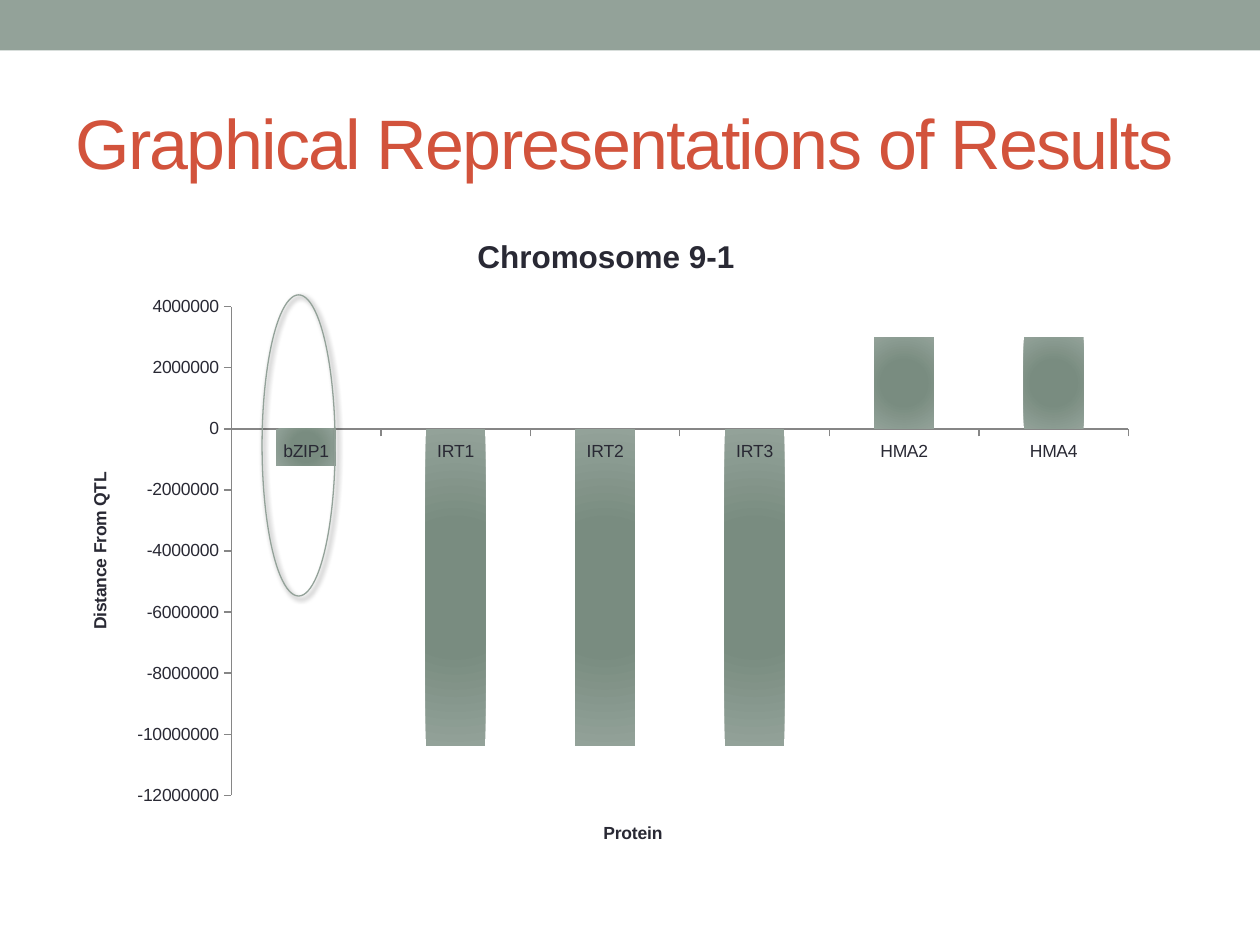
import pptx
import pptx.util
import pptx.oxml
import pptx.oxml.ns
import pptx.dml.color
import pptx.chart.data
import pptx.enum.chart
import pptx.enum.shapes
import pptx.enum.text
import lxml.etree

Inches = pptx.util.Inches
Pt = pptx.util.Pt
HUES = {"sage": "93A299", "moss": "798C80", "rust": "D2533C", "ink": "292934", "grey": "868686", "black": "000000"}
NS = pptx.oxml.ns.nsdecls("a", "c")


def hue(name):
    return pptx.dml.color.RGBColor.from_string(HUES[name])


def style(font, size, name, bold=False):
    font.name = "Arial"
    font.size = Pt(size)
    font.bold = bold
    font.color.rgb = hue(name)


deck = pptx.Presentation()
deck.slide_width, deck.slide_height = Inches(10), Inches(7.5)
slide = deck.slides.add_slide(deck.slide_layouts[5])
shapes = slide.shapes

title = shapes.title
title.left, title.top, title.width, title.height = Inches(0.5), Inches(0.58), Inches(9), Inches(1.08)
frame = title.text_frame
frame.text = "Graphical Representations of Results"
frame.word_wrap = True
frame.vertical_anchor = pptx.enum.text.MSO_ANCHOR.MIDDLE
line = frame.paragraphs[0]
line.alignment = pptx.enum.text.PP_ALIGN.LEFT
style(line.runs[0].font, 40, "rust")
line.runs[0].font._element.set("spc", "-100")

band = shapes.add_shape(pptx.enum.shapes.MSO_SHAPE.RECTANGLE, 0, 0, Inches(10), Inches(0.4))
band.shadow.inherit = False
band.fill.solid()
band.fill.fore_color.rgb = hue("sage")
band.line.fill.background()

data = pptx.chart.data.CategoryChartData()
data.categories = ["bZIP1", "IRT1", "IRT2", "IRT3", "HMA2", "HMA4"]
data.add_series("Series 1", [-1200000] + [-10400000] * 3 + [3000000] * 2)
chart = shapes.add_chart(
    pptx.enum.chart.XL_CHART_TYPE.COLUMN_CLUSTERED,
    Inches(0.5), Inches(1.67), Inches(8.62), Inches(5.24), data,
).chart
style(chart.font, 10, "ink")
chart.has_legend = False
chart.has_title = True
chart.chart_title.text_frame.text = "Chromosome 9-1"
style(chart.chart_title.text_frame.paragraphs[0].runs[0].font, 18, "ink", True)

for axis, name in ((chart.category_axis, "Protein"), (chart.value_axis, "Distance From QTL")):
    axis.has_title = True
    axis.axis_title.text_frame.text = name
    style(axis.axis_title.text_frame.paragraphs[0].runs[0].font, 10, "ink", True)
    axis.has_major_gridlines = False
    axis.major_tick_mark = pptx.enum.chart.XL_TICK_MARK.OUTSIDE
    axis.format.line.color.rgb = hue("grey")
    axis.format.line.width = Pt(0.75)

scale = chart.value_axis
scale.minimum_scale, scale.maximum_scale, scale.major_unit = -12000000, 4000000, 2000000
scale.tick_labels.number_format = "0"
scale.tick_labels.number_format_is_linked = False

plot = chart.plots[0]
plot.vary_by_categories = False
plot.gap_width = 150
bars = plot.series[0]
bars.invert_if_negative = False
bars.format.fill.solid()
bars.format.fill.fore_color.rgb = hue("sage")
solid = bars.format.fill._xPr.find(pptx.oxml.ns.qn("a:solidFill"))
blend = pptx.oxml.parse_xml(
    f'<a:gradFill {NS} rotWithShape="1"><a:gsLst>'
    f'<a:gs pos="0"><a:srgbClr val="{HUES["moss"]}"/></a:gs>'
    f'<a:gs pos="40000"><a:srgbClr val="{HUES["moss"]}"/></a:gs>'
    f'<a:gs pos="100000"><a:srgbClr val="{HUES["sage"]}"/></a:gs></a:gsLst>'
    '<a:path path="circle"><a:fillToRect l="50000" t="50000" r="50000" b="50000"/></a:path></a:gradFill>'
)
solid.getparent().replace(solid, blend)

area = chart._chartSpace.chart.plotArea
for old in area.findall(pptx.oxml.ns.qn("c:layout")):
    area.remove(old)
spots = "".join(f'<c:{key} val="{val}"/>' for key, val in (
    ("layoutTarget", "inner"), ("xMode", "edge"), ("yMode", "edge"),
    ("x", 0.155), ("y", 0.146), ("w", 0.826), ("h", 0.74)))
area.insert(0, pptx.oxml.parse_xml(f"<c:layout {NS}><c:manualLayout>{spots}</c:manualLayout></c:layout>"))

ring = shapes.add_shape(pptx.enum.shapes.MSO_SHAPE.OVAL, Inches(2.08), Inches(2.34), Inches(0.58), Inches(2.39))
ring.fill.background()
ring.line.color.rgb = hue("sage")
ring.line.width = Pt(0.75)
ring.shadow.inherit = False
glow = ring._element.spPr.find(pptx.oxml.ns.qn("a:effectLst"))
glow.append(pptx.oxml.parse_xml(
    f'<a:outerShdw {NS} blurRad="{Pt(3)}" dist="{Pt(2)}" dir="2700000" rotWithShape="0">'
    f'<a:srgbClr val="{HUES["black"]}"><a:alpha val="60000"/></a:srgbClr></a:outerShdw>'
))

deck.save("out.pptx")
